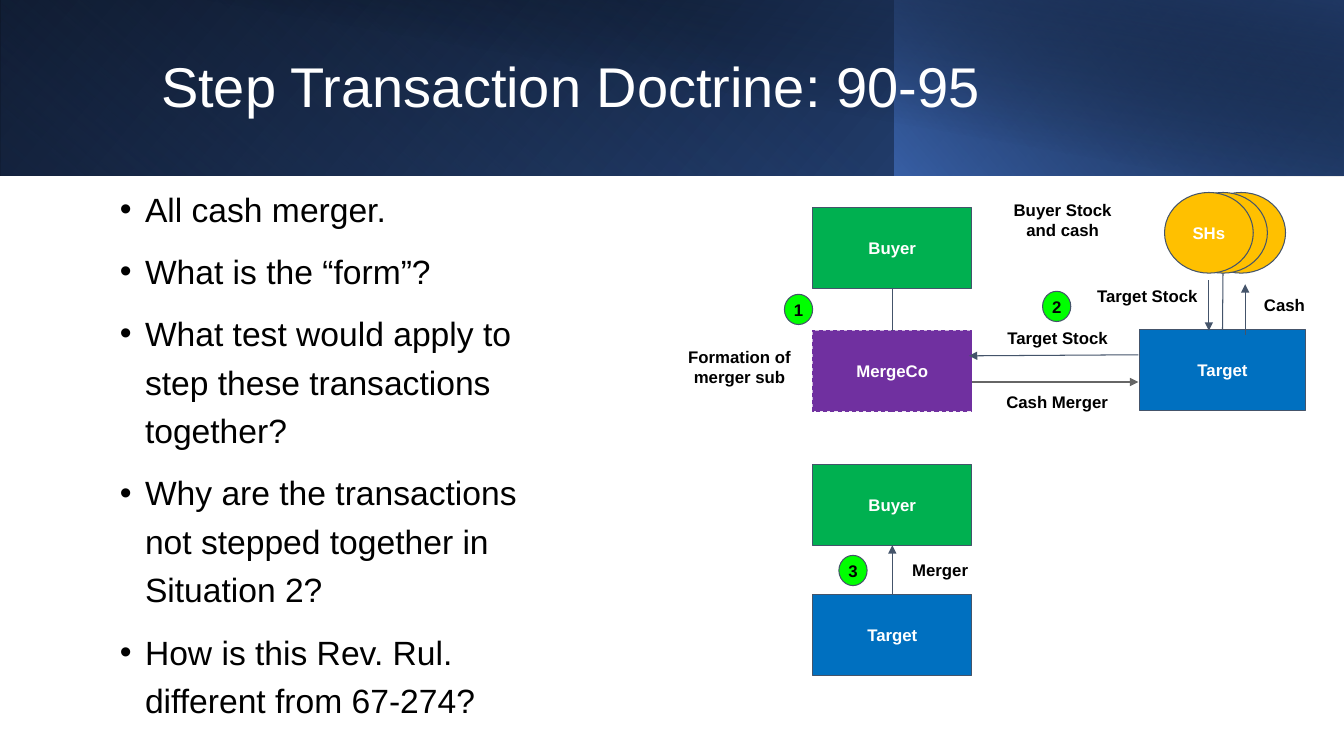
from lxml import etree
from pptx import Presentation
from pptx import util as u
from pptx.dml.color import RGBColor
from pptx.enum import dml, shapes, text
from pptx.oxml.ns import qn

PX = 9144  # 100 px to the inch
COLORS = {
    "white": "FFFFFF", "black": "000000", "slate": "44546A", "gray": "666666",
    "green": "00B050", "purple": "7030A0", "blue": "0070C0", "gold": "FFC000",
    "lime": "00FF00", "royal": "2F5597", "sky": "4472C4", "navy": "203864",
}
RGB = {name: RGBColor.from_string(value) for name, value in COLORS.items()}
KIND = shapes.MSO_SHAPE
ANCHOR = text.MSO_ANCHOR

prs = Presentation()
prs.slide_width, prs.slide_height = 1333 * PX, 750 * PX
s = prs.slides.add_slide(prs.slide_layouts[6])


def write(sp, lines, size=12, color="black", bold=True, align=text.PP_ALIGN.CENTER,
          anchor=ANCHOR.TOP, inset=(10, 10), spacing=None, before=0, bullet=False):
    tf = sp.text_frame
    tf.word_wrap = True
    tf.vertical_anchor = anchor
    tf.margin_left = tf.margin_right = inset[0] * PX
    tf.margin_top = tf.margin_bottom = inset[1] * PX
    for i, line in enumerate(lines.split("\n")):
        p = tf.add_paragraph() if i else tf.paragraphs[0]
        p.alignment = align
        p.line_spacing = spacing
        p.space_before = u.Pt(before)
        r = p.add_run()
        r.text = line
        r.font.name, r.font.size, r.font.bold = "Arial", u.Pt(size), bold
        r.font.color.rgb = RGB[color]
        if bullet:
            pPr = p._p.get_or_add_pPr()
            pPr.set("marL", str(25 * PX))
            pPr.set("indent", str(-25 * PX))
            etree.SubElement(pPr, qn("a:buFont")).set("typeface", "Arial")
            etree.SubElement(pPr, qn("a:buChar")).set("char", "•")


def add_block(kind, box, fill, line="slate"):
    sp = s.shapes.add_shape(kind, *[v * PX for v in box])
    sp.shadow.inherit = False
    sp.fill.solid()
    sp.fill.fore_color.rgb = RGB[fill]
    sp.line.color.rgb = RGB[line]
    sp.line.width = u.Pt(0.75)
    return sp


# Header band: layered gradients, each stop is (position %, colour, opacity %)
for box, angle, rotation, flip, stops in [
    ((0, 0, 1333, 174), 140, 0, True, [(0, "black", 100), (100, "royal", 100)]),
    ((0, 0, 888, 174), 230, 180, True, [(20, "sky", 0), (100, "navy", 55)]),
    ((887, 0, 446, 174), 220, 0, True, [(0, "sky", 66), (100, "black", 30)]),
    ((50, 0, 1283, 175), 280, 0, False, [(50, "black", 0), (99, "navy", 52)]),
]:
    sp = add_block(KIND.RECTANGLE, box, "navy")
    sp.line.fill.background()
    sp.rotation = rotation
    if flip:
        sp._element.spPr.find(qn("a:xfrm")).set("flipH", "1")
    sp.fill.gradient()
    sp.fill.gradient_angle = 360 - angle
    for stop, (position, color, opacity) in zip(sp.fill.gradient_stops, stops):
        stop.position = position / 100
        stop.color.rgb = RGB[color]
    for clr, (position, color, opacity) in zip(sp._element.spPr.iter(qn("a:srgbClr")), stops):
        etree.SubElement(clr, qn("a:alpha")).set("val", str(opacity * 1000))

# Title and questions
title = s.shapes.add_textbox(150 * PX, 32 * PX, 1082 * PX, 113 * PX)
write(title, "Step Transaction Doctrine: 90-95", size=40, color="white", bold=False,
      align=text.PP_ALIGN.LEFT, anchor=ANCHOR.MIDDLE, inset=(10, 5), spacing=0.9)
questions = s.shapes.add_textbox(109 * PX, 174 * PX, 463 * PX, 559 * PX)
write(questions, "All cash merger.\n"
      "What is the “form”?\n"
      "What test would apply to step these transactions together?\n"
      "Why are the transactions not stepped together in Situation 2?\n"
      "How is this Rev. Rul. different from 67-274?",
      size=24, bold=False, align=text.PP_ALIGN.LEFT, inset=(10, 5),
      spacing=1.2, before=10, bullet=True)

# Companies
companies = {}
for key, name, box, fill in [
    ("buyer", "Buyer", (806, 206, 158, 80), "green"),
    ("mergeco", "MergeCo", (806, 328, 158, 80), "purple"),
    ("target", "Target", (1130, 327, 165, 80), "blue"),
    ("buyer after", "Buyer", (806, 461, 158, 80), "green"),
    ("target after", "Target", (806, 590, 158, 80), "blue"),
]:
    companies[key] = add_block(KIND.RECTANGLE, box, fill)
    write(companies[key], name, color="white", anchor=ANCHOR.MIDDLE)
mergeco_line = companies["mergeco"].line
mergeco_line.color.rgb = RGB["purple"]
mergeco_line.dash_style = dml.MSO_LINE.DASH

# Shareholders: stacked circles, the front one labelled
for x in (1187, 1169, 1155):
    sp = add_block(KIND.FLOWCHART_CONNECTOR, (x, 191, 88, 80), "gold")
write(sp, "SHs", color="white", anchor=ANCHOR.MIDDLE)

# Lines and arrows: ends, colour, arrowhead, joined (company, side) at each end
for ends, color, arrow, start, end in [
    ((885, 286, 885, 328), "slate", False, ("buyer", 2), ("mergeco", 0)),
    ((1213, 271, 1213, 327), "slate", False, None, ("target", 0)),
    ((964, 379, 1129, 379), "gray", True, None, None),
    ((1129, 352, 961, 353), "slate", True, None, None),
    ((1235, 332, 1235, 282), "slate", True, None, None),
    ((1199, 278, 1199, 328), "slate", True, None, None),
    ((885, 590, 885, 541), "slate", True, ("target after", 0), ("buyer after", 2)),
]:
    cx = s.shapes.add_connector(shapes.MSO_CONNECTOR.STRAIGHT, *[v * PX for v in ends])
    cx.line.color.rgb = RGB[color]
    cx.line.width = u.Pt(0.75)
    if arrow:
        etree.SubElement(cx.line._get_or_add_ln(), qn("a:tailEnd")).set("type", "triangle")
    etree.SubElement(cx._element.spPr, qn("a:effectLst"))
    if start:
        cx.begin_connect(companies[start[0]], start[1])
    if end:
        cx.end_connect(companies[end[0]], end[1])

# Step numbers
for number, (x, y) in enumerate([(778, 292), (1034, 289), (832, 551)], start=1):
    sp = add_block(KIND.OVAL, (x, y, 28, 30), "lime")
    write(sp, str(number), anchor=ANCHOR.MIDDLE, inset=(0, 0))

# Labels
for label, box in [
    ("Formation of merger sub", (661, 334, 145, 30)),
    ("Cash Merger", (976, 379, 145, 30)),
    ("Buyer Stock and cash", (994, 188, 120, 56)),
    ("Target Stock", (989, 315, 120, 56)),
    ("Cash", (1214, 282, 120, 56)),
    ("Target Stock", (1078, 273, 120, 56)),
    ("Merger", (860, 545, 145, 30)),
]:
    write(s.shapes.add_textbox(*[v * PX for v in box]), label)

prs.save("out.pptx")
